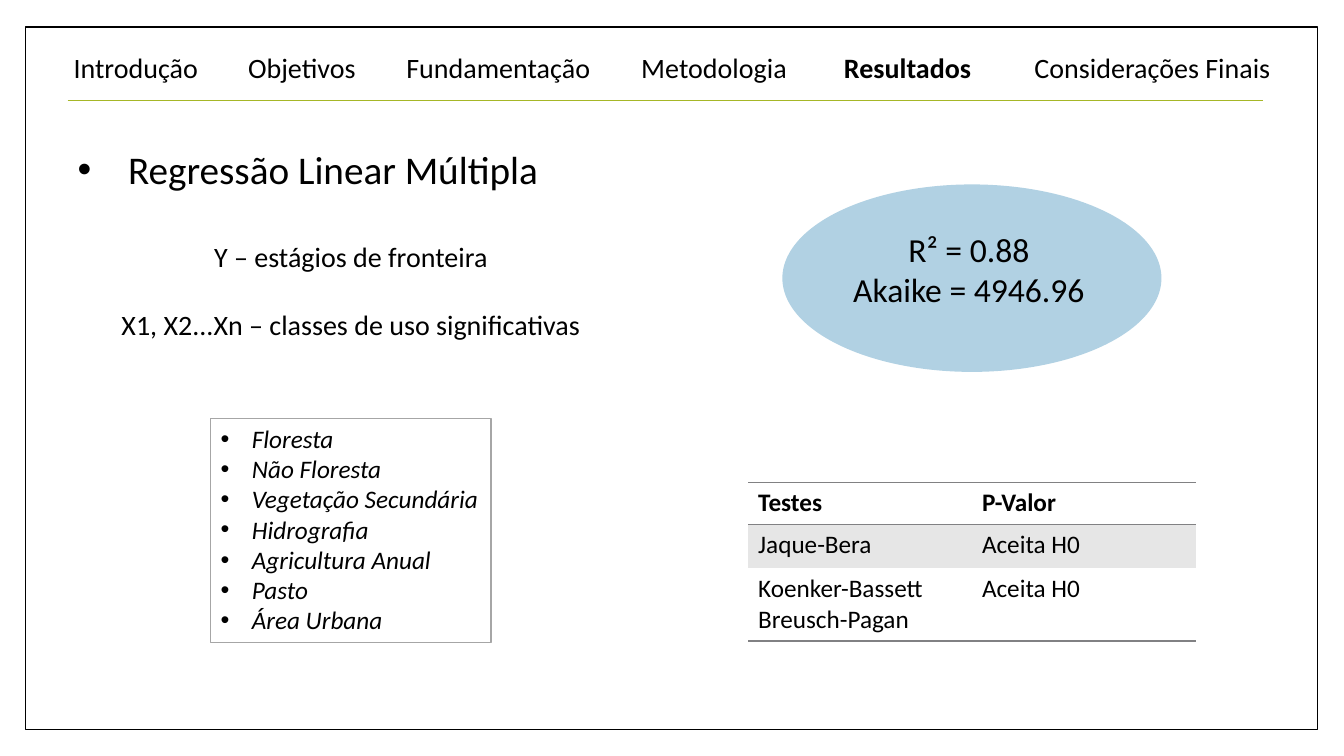
from dataclasses import dataclass

from lxml import etree
from pptx import Presentation
from pptx.dml.color import RGBColor
from pptx.enum import shapes, text
from pptx.oxml import ns
from pptx.util import Inches, Pt

FONT = "Calibri"
BLACK, WHITE, LIME, SKY = "000000", "FFFFFF", "A6B727", "B1D1E3"
RULE_GREY, BOX_GREY, BAND_GREY = "818183", "A6A6A6", "E6E6E6"


@dataclass
class Box:
    left: float
    top: float
    width: float
    height: float

    def lengths(self) -> list:
        return [Inches(v) for v in (self.left, self.top, self.width, self.height)]


@dataclass
class Line:
    words: str
    size: int
    bold: bool = False
    italic: bool = False
    align: text.PP_ALIGN = text.PP_ALIGN.LEFT
    indent: float = 0
    before: int = 0


@dataclass
class Section:
    name: str
    tab: float
    current: bool = False


SECTIONS = [
    Section("Introdução", 0),
    Section("Objetivos", 1.73),
    Section("Fundamentação", 3.3),
    Section("Metodologia", 5.63),
    Section("Resultados", 7.64, current=True),
    Section("Considerações Finais", 9.53),
]
LAND_USES = ["Floresta", "Não Floresta", "Vegetação Secundária", "Hidrografia",
             "Agricultura Anual", "Pasto", "Área Urbana"]
TESTS = [
    (["Testes"], ["P-Valor"]),
    (["Jaque-Bera"], ["Aceita H0"]),
    (["Koenker-Bassett", "Breusch-Pagan"], ["Aceita H0"]),
]
ROW_HEIGHTS = [0.41, 0.44, 0.72]


def color(value: str) -> RGBColor:
    return RGBColor.from_string(value)


def add_xml(parent, tag: str, **attributes: str):
    return etree.SubElement(parent, ns.qn(tag), attributes)


def add_run(paragraph, words: str, size: int, bold: bool = False, italic: bool = False) -> None:
    run = paragraph.add_run()
    run.text = words
    run.font.name, run.font.size = FONT, Pt(size)
    run.font.bold, run.font.italic = bold, italic
    run.font.color.rgb = color(BLACK)


def write(frame, lines: list[Line]) -> None:
    """Fill a text frame; a line with an indent gets a bullet."""
    for index, line in enumerate(lines):
        paragraph = frame.paragraphs[0] if index == 0 else frame.add_paragraph()
        paragraph.alignment = line.align
        paragraph.space_before = Pt(line.before)
        properties = paragraph._p.get_or_add_pPr()
        properties.set("marL", str(Inches(line.indent)))
        properties.set("indent", str(-Inches(line.indent)))
        if line.indent:
            add_xml(properties, "a:buFont", typeface="Arial")
            add_xml(properties, "a:buChar", char="•")
        else:
            add_xml(properties, "a:buNone")
        add_run(paragraph, line.words, line.size, line.bold, line.italic)


def place(shape, box: Box) -> None:
    shape.left, shape.top, shape.width, shape.height = box.lengths()


def add_shape(slide, kind, box: Box, fill: str | None = None,
              outline: str | None = None, weight: float = 1):
    shape = slide.shapes.add_shape(kind, *box.lengths())
    shape.shadow.inherit = False
    if fill:
        shape.fill.solid()
        shape.fill.fore_color.rgb = color(fill)
    else:
        shape.fill.background()
    if outline:
        shape.line.color.rgb = color(outline)
        shape.line.width = Pt(weight)
    else:
        shape.line.fill.background()
    return shape


def add_navigation(slide) -> None:
    title = slide.shapes.title
    place(title, Box(0.63, 0.37, 12.5, 0.63))
    frame = title.text_frame
    frame.auto_size = text.MSO_AUTO_SIZE.NONE
    frame.vertical_anchor = text.MSO_ANCHOR.MIDDLE
    paragraph = frame.paragraphs[0]
    paragraph.alignment = text.PP_ALIGN.LEFT
    paragraph.line_spacing = 0.9
    tabs = add_xml(paragraph._p.get_or_add_pPr(), "a:tabLst")
    for section in SECTIONS:
        if section.tab:
            add_xml(tabs, "a:tab", pos=str(Inches(section.tab)), algn="l")
            add_run(paragraph, "\t", 20)
        add_run(paragraph, section.name, 20, section.current)

    rule = slide.shapes.add_connector(shapes.MSO_CONNECTOR.STRAIGHT,
                                      Inches(0.67), Inches(1), Inches(12.53), Inches(1))
    rule.line.color.rgb = color(LIME)
    rule.line.width = Pt(0.79)
    add_xml(rule._element.spPr, "a:effectLst")


def add_model(slide) -> None:
    body = slide.placeholders[1]
    place(body, Box(0.67, 1.39, 5.62, 2.05))
    body.text_frame.auto_size = text.MSO_AUTO_SIZE.NONE
    center = text.PP_ALIGN.CENTER
    write(body.text_frame, [
        Line("Regressão Linear Múltipla", 28, align=text.PP_ALIGN.JUSTIFY, indent=0.5),
        Line("Y – estágios de fronteira", 20, align=center, before=34),
        Line("X1, X2...Xn – classes de uso significativas", 20, align=center, before=24),
    ])


def add_land_uses(slide) -> None:
    box = add_shape(slide, shapes.MSO_SHAPE.RECTANGLE, Box(2.09, 4.15, 2.78, 2.22),
                    outline=BOX_GREY, weight=0.75)
    box.text_frame.vertical_anchor = text.MSO_ANCHOR.TOP
    write(box.text_frame, [Line(use, 18, italic=True, indent=0.31) for use in LAND_USES])


def add_fit(slide) -> None:
    add_shape(slide, shapes.MSO_SHAPE.OVAL, Box(7.76, 1.83, 3.76, 1.86), fill=SKY)
    label = slide.shapes.add_textbox(*Box(7.76, 2.22, 3.7, 0.91).lengths())
    label.text_frame.word_wrap = True
    write(label.text_frame, [Line(words, 24, align=text.PP_ALIGN.CENTER)
                             for words in ("R² = 0.88", "Akaike = 4946.96")])


def set_borders(cell, ruled: str) -> None:
    """Rule the named sides (letters of LRTB) and clear the others."""
    properties = cell._tc.get_or_add_tcPr()
    for side in "LRTB":
        border = add_xml(properties, f"a:ln{side}", w=str(Pt(1)))
        if side in ruled:
            add_xml(add_xml(border, "a:solidFill"), "a:srgbClr", val=RULE_GREY)
        else:
            add_xml(border, "a:noFill")


def add_tests(slide) -> None:
    box = Box(7.42, 4.79, 4.44, sum(ROW_HEIGHTS))
    table = slide.shapes.add_table(len(TESTS), 2, *box.lengths()).table
    table.first_row = table.horz_banding = False
    rules = ["TB", "T", "B"]
    for row, (entries, height) in enumerate(zip(TESTS, ROW_HEIGHTS)):
        table.rows[row].height = Inches(height)
        for column, words in enumerate(entries):
            cell = table.cell(row, column)
            set_borders(cell, rules[row])
            if row == 1:
                cell.fill.solid()
                cell.fill.fore_color.rgb = color(BAND_GREY)
            else:
                cell.fill.background()
            write(cell.text_frame, [Line(word, 18, bold=row == 0) for word in words])


def main() -> None:
    presentation = Presentation()
    presentation.slide_width, presentation.slide_height = Inches(13.33), Inches(7.5)
    slide = presentation.slides.add_slide(presentation.slide_layouts[1])
    border = add_shape(slide, shapes.MSO_SHAPE.RECTANGLE, Box(0.25, 0.27, 12.82, 6.97),
                       fill=WHITE, outline=BLACK)
    slide.shapes.title._element.addprevious(border._element)
    add_navigation(slide)
    add_model(slide)
    add_land_uses(slide)
    add_fit(slide)
    add_tests(slide)
    presentation.save("out.pptx")


if __name__ == "__main__":
    main()
